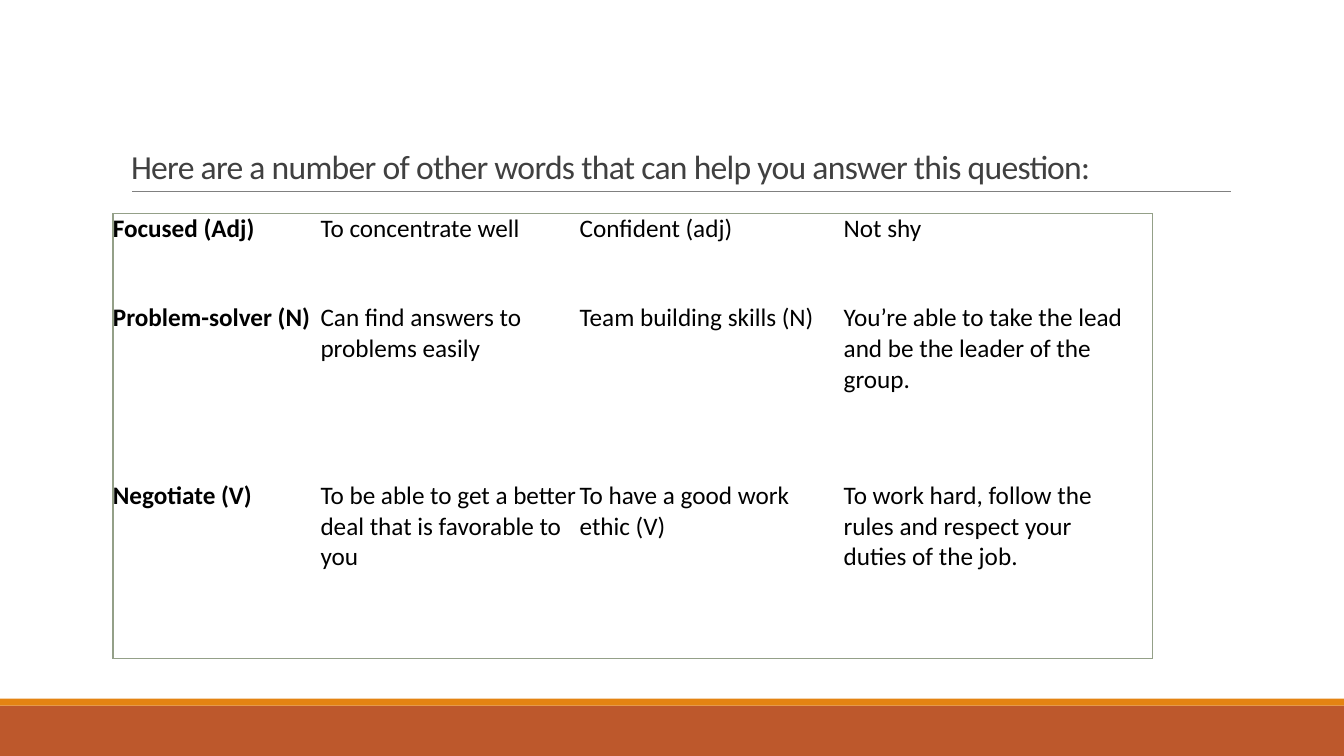
from dataclasses import dataclass

from lxml import etree
from pptx import Presentation
from pptx import util as u
from pptx.dml.color import RGBColor
from pptx.enum import shapes, text
from pptx.oxml.ns import qn
from pptx.slide import Slide
from pptx.table import _Cell
from pptx.text.text import TextFrame

SLIDE_WIDTH = u.Inches(13.333)
SLIDE_HEIGHT = u.Inches(7.5)

RUST = RGBColor(0xBD, 0x58, 0x2C)
ORANGE = RGBColor(0xE4, 0x83, 0x12)
GRAY = RGBColor(0x80, 0x80, 0x80)
CHARCOAL = RGBColor(0x40, 0x40, 0x40)
BLACK = RGBColor(0, 0, 0)
SAGE = RGBColor(0x94, 0xA0, 0x88)
FONT = "Calibri"

TITLE = "Here are a number of other words that can help you answer this question:"
WORDS = [
    ["Focused (Adj)", "To concentrate well", "Confident (adj)", "Not shy", ""],
    ["Problem-solver (N)", "Can find answers to problems easily", "Team building skills (N)",
     "You’re able to take the lead and be the leader of the group.", ""],
    ["Negotiate (V)", "To be able to get a better deal that is favorable to you",
     "To have a good work ethic (V)",
     "To work hard, follow the rules and respect your duties of the job.", ""],
]
COLUMN_SHARES = [15.45, 19.28, 19.65, 21.53, 1.43]
ROW_PARTS = [1, 2, 2]


def across(percent: float) -> int:
    return round(SLIDE_WIDTH * percent / 100)


def down(percent: float) -> int:
    return round(SLIDE_HEIGHT * percent / 100)


@dataclass
class Box:
    """A rectangle in percent of the slide's width and height."""
    left: float
    top: float
    width: float
    height: float

    def lengths(self) -> tuple[int, int, int, int]:
        return across(self.left), down(self.top), across(self.width), down(self.height)


@dataclass
class Band:
    box: Box
    color: RGBColor


BANDS = [
    Band(Box(0, 93.33, 100, 6.67), RUST),
    Band(Box(0, 92.4, 100, 0.93), ORANGE),
]
TITLE_BOX = Box(9, 4.13, 82.5, 21.2)
TABLE_BOX = Box(8.4, 28.27, sum(COLUMN_SHARES), 58.8)


def format_runs(frame: TextFrame, size: float, color: RGBColor, bold: bool = False) -> None:
    for paragraph in frame.paragraphs:
        for run in paragraph.runs:
            run.font.name = FONT
            run.font.size = u.Pt(size)
            run.font.bold = bold
            run.font.color.rgb = color


def draw_band(slide: Slide, band: Band) -> None:
    shape = slide.shapes.add_shape(shapes.MSO_SHAPE.RECTANGLE, *band.box.lengths())
    shape.shadow.inherit = False
    shape.fill.solid()
    shape.fill.fore_color.rgb = band.color
    shape.line.fill.background()


def draw_rule(slide: Slide, left: float, right: float, top: float) -> None:
    rule = slide.shapes.add_connector(
        shapes.MSO_CONNECTOR.STRAIGHT, across(left), down(top), across(right), down(top))
    rule.line.color.rgb = GRAY
    rule.line.width = u.Pt(0.5)
    etree.SubElement(rule._element.spPr, qn("a:effectLst"))


def fill_title(slide: Slide) -> None:
    title = slide.shapes.title
    title.left, title.top, title.width, title.height = TITLE_BOX.lengths()
    frame = title.text_frame
    frame.text = TITLE
    frame.word_wrap = True
    frame.auto_size = text.MSO_AUTO_SIZE.NONE
    frame.vertical_anchor = text.MSO_ANCHOR.BOTTOM
    paragraph = frame.paragraphs[0]
    paragraph.alignment = text.PP_ALIGN.LEFT
    paragraph.line_spacing = 0.85
    format_runs(frame, 24, CHARCOAL)
    paragraph.runs[0].font._element.set("spc", "-50")


def set_borders(cell: _Cell, sides: dict[str, bool]) -> None:
    properties = cell._tc.get_or_add_tcPr()
    for side, visible in sides.items():
        line = etree.SubElement(properties, qn(f"a:ln{side}"), w=str(u.Pt(1)))
        if visible:
            fill = etree.SubElement(line, qn("a:solidFill"))
            etree.SubElement(fill, qn("a:srgbClr"), val=str(SAGE))
        else:
            etree.SubElement(line, qn("a:noFill"))


def draw_table(slide: Slide) -> None:
    last_row, last_column = len(WORDS) - 1, len(COLUMN_SHARES) - 1
    table = slide.shapes.add_table(
        len(WORDS), len(COLUMN_SHARES), *TABLE_BOX.lengths()).table
    table.first_row = table.horz_banding = False
    for column, share in zip(table.columns, COLUMN_SHARES):
        column.width = across(share)
    for row, part in zip(table.rows, ROW_PARTS):
        row.height = down(TABLE_BOX.height * part / sum(ROW_PARTS))

    for i, words in enumerate(WORDS):
        for j, wording in enumerate(words):
            cell = table.cell(i, j)
            # Only the outer frame is visible
            set_borders(cell, {"L": j == 0, "R": j == last_column,
                               "T": i == 0, "B": i == last_row})
            cell.fill.background()
            cell.margin_left = cell.margin_right = cell.margin_top = cell.margin_bottom = 0
            cell.text_frame.text = wording
            format_runs(cell.text_frame, 18, BLACK, bold=j == 0)


def main() -> None:
    presentation = Presentation()
    presentation.slide_width = SLIDE_WIDTH
    presentation.slide_height = SLIDE_HEIGHT
    slide = presentation.slides.add_slide(presentation.slide_layouts.get_by_name("Title Only"))

    # Footer bands and the rule under the title
    for band in BANDS:
        draw_band(slide, band)
    draw_rule(slide, 9.83, 91.58, 25.33)

    # Title and vocabulary
    fill_title(slide)
    draw_table(slide)
    presentation.save("out.pptx")


if __name__ == "__main__":
    main()
